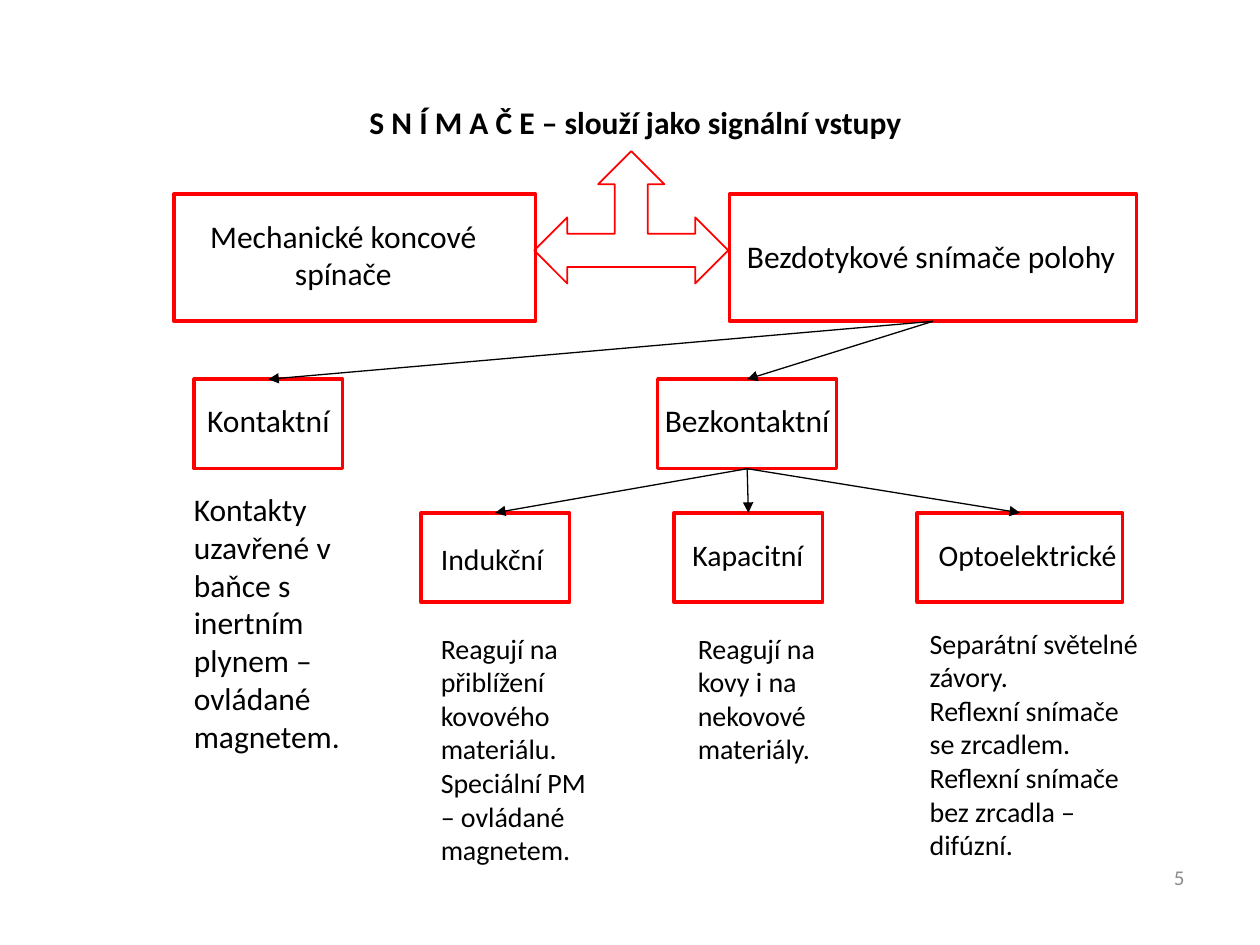
from lxml import etree
from pptx import Presentation
from pptx.dml.color import RGBColor
from pptx.enum.shapes import MSO_CONNECTOR, MSO_SHAPE
from pptx.enum.text import MSO_ANCHOR, MSO_AUTO_SIZE, PP_ALIGN
from pptx.oxml.ns import qn
from pptx.util import Inches, Pt

RECT, TRIPLE_ARROW = MSO_SHAPE.RECTANGLE, MSO_SHAPE.LEFT_RIGHT_UP_ARROW
LEFT, CENTER, RIGHT = PP_ALIGN.LEFT, PP_ALIGN.CENTER, PP_ALIGN.RIGHT
TOP, MIDDLE = MSO_ANCHOR.TOP, MSO_ANCHOR.MIDDLE
SITE_TOP, SITE_BOTTOM = 0, 2
COLORS = {"text": "000000", "frame": "FF0000", "number": "8C8C8C"}

# Grid of 100 columns by 75 rows
UNIT = Inches(10) // 100

# Box, label (offset and size inside the box), text, size
NODES = {
    "mechanical": ((13.8, 15.4, 28.7, 10.1), (-1.9, 1.3, 30.7, 7.1),
                   "Mechanické koncové spínače", 18),
    "contactless": ((57.9, 15.4, 32.3, 10.1), (-4.1, 2.9, 40.2, 4),
                    "Bezdotykové snímače polohy", 18),
    "reed": ((15.4, 30.1, 11.8, 7.1), (-7, 1.2, 25.8, 4), "Kontaktní", 18),
    "solid": ((52.2, 30.1, 14.2, 7.1), (-5.8, 1.2, 25.8, 4), "Bezkontaktní", 18),
    "inductive": ((33.4, 40.7, 11.8, 7.1), (-1.8, 1.7, 14.9, 3.9), "Indukční", 17),
    "capacitive": ((53.5, 40.7, 11.8, 7.1), (-1.6, 1.4, 14.9, 3.9), "Kapacitní", 17),
    "optical": ((72.8, 40.7, 16.3, 7.1), (-1.5, 1.4, 20.5, 3.9),
                "Optoelektrické", 17),
}
BRANCHES = {
    "contactless": ("reed", "solid"),
    "solid": ("inductive", "capacitive", "optical"),
}
DESCRIPTIONS = [
    ((14.4, 38.4, 13.7, 22.2), 18,
     ["Kontakty uzavřené v baňce s inertním plynem – ovládané magnetem."]),
    ((34, 49.6, 13.7, 19.9), 16,
     ["Reagují na přiblížení kovového materiálu.",
      "Speciální PM – ovládané magnetem."]),
    ((54.4, 49.6, 13.7, 11.8), 16, ["Reagují na kovy i na nekovové materiály."]),
    ((72.8, 49.2, 19, 19.9), 16,
     ["Separátní světelné závory.", "Reflexní snímače se zrcadlem.",
      "Reflexní snímače bez zrcadla – difúzní."]),
]


def place(box):
    return [round(length * UNIT) for length in box]


def write(frame, paragraphs, size, align=LEFT, anchor=TOP, color="text", bold=False):
    frame.word_wrap = True
    frame.auto_size = MSO_AUTO_SIZE.NONE
    frame.vertical_anchor = anchor
    font_format = {"name": "Calibri", "size": Pt(size), "bold": bold}
    for index, text in enumerate(paragraphs):
        paragraph = frame.add_paragraph() if index else frame.paragraphs[0]
        paragraph.alignment = align
        run = paragraph.add_run()
        run.text = text
        for attribute, value in font_format.items():
            setattr(run.font, attribute, value)
        run.font.color.rgb = RGBColor.from_string(COLORS[color])


def add_text(slide, box, paragraphs, size, **style):
    write(slide.shapes.add_textbox(*place(box)).text_frame, paragraphs, size, **style)


def add_title(slide, box, text):
    title = slide.shapes.title
    title.left, title.top, title.width, title.height = place(box)
    write(title.text_frame, [text], 18, align=CENTER, bold=True)


def add_outline(slide, kind, box, weight):
    outline = slide.shapes.add_shape(kind, *place(box))
    outline.shadow.inherit = False
    outline.fill.background()
    outline.line.color.rgb = RGBColor.from_string(COLORS["frame"])
    outline.line.width = Pt(weight)
    return outline


def add_node(slide, box, label, text, size):
    frame = add_outline(slide, RECT, box, 2)
    label_box = (box[0] + label[0], box[1] + label[1], *label[2:])
    add_text(slide, label_box, [text], size, align=CENTER)
    return frame


def add_branch(slide, child, parent):
    """Line from parent to child, with its arrowhead at the child."""
    branch = slide.shapes.add_connector(MSO_CONNECTOR.STRAIGHT, 0, 0, 0, 0)
    branch.begin_connect(child, SITE_TOP)
    branch.end_connect(parent, SITE_BOTTOM)
    branch.line.color.rgb = RGBColor.from_string(COLORS["text"])
    branch.line.width = Pt(0.75)
    etree.SubElement(branch.line._get_or_add_ln(), qn("a:headEnd"), type="triangle")
    etree.SubElement(branch._element.spPr, qn("a:effectLst"))


def add_tree(slide):
    frames = {key: add_node(slide, *node) for key, node in NODES.items()}
    for parent, children in BRANCHES.items():
        for child in children:
            add_branch(slide, frames[child], frames[parent])


def main():
    prs = Presentation()
    prs.slide_width, prs.slide_height = Inches(10), Inches(7.5)
    slide = prs.slides.add_slide(prs.slide_layouts[5])

    # Heading and the arrow to the two main groups
    add_title(slide, (5.9, 7.7, 89.1, 4), "S N Í M A Č E – slouží jako signální vstupy")
    add_outline(slide, TRIPLE_ARROW, (42.4, 12, 15.4, 10.5), 1)

    # Sensor tree and its descriptions
    add_tree(slide)
    for box, size, paragraphs in DESCRIPTIONS:
        add_text(slide, box, paragraphs, size)

    # Slide number
    add_text(slide, (71.7, 67.7, 23.3, 3.8), ["5"], 12,
             align=RIGHT, anchor=MIDDLE, color="number")
    prs.save("out.pptx")


if __name__ == "__main__":
    main()
